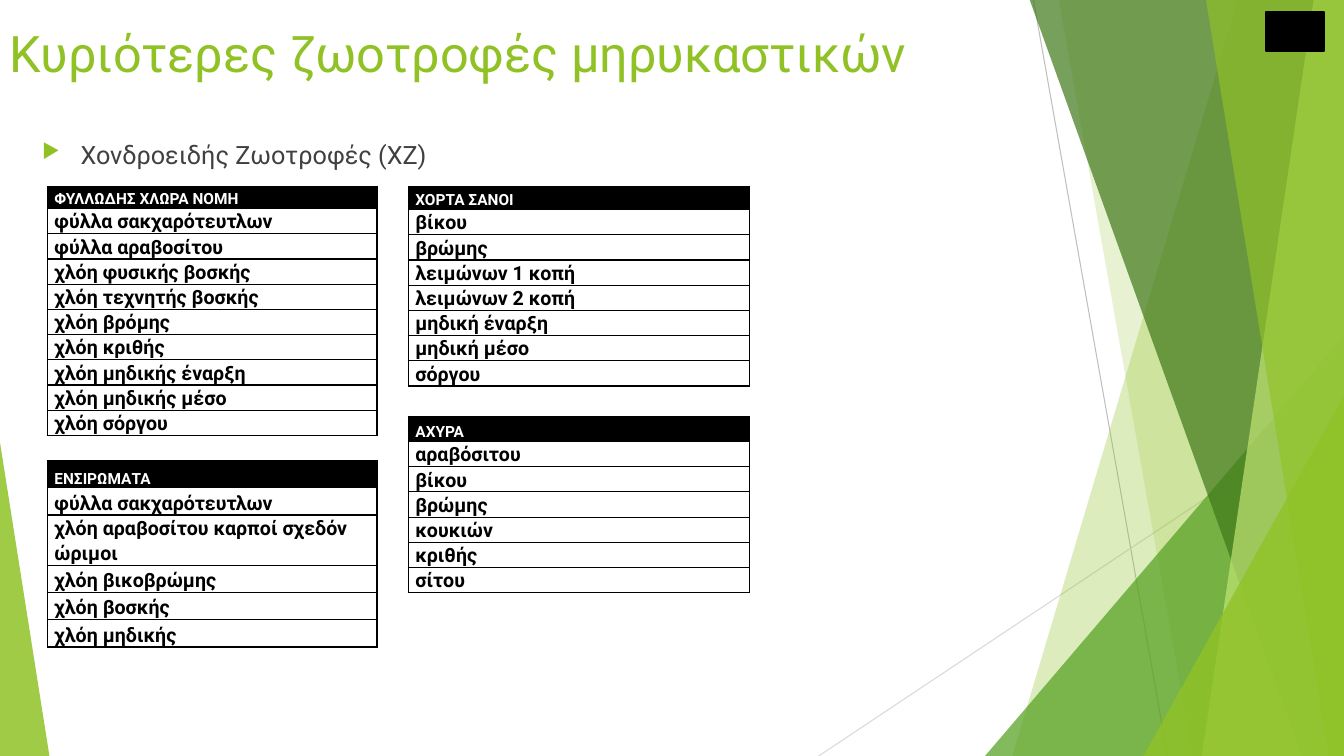
from dataclasses import dataclass

from lxml.etree import SubElement
from pptx import Presentation
from pptx.dml.color import RGBColor
from pptx.enum.shapes import MSO_CONNECTOR, MSO_SHAPE
from pptx.enum.text import MSO_ANCHOR
from pptx.oxml import parse_xml
from pptx.oxml.ns import nsdecls, qn
from pptx.util import Inches, Pt


@dataclass(frozen=True)
class Theme:
    font: str = "Roboto"
    lime: str = "90C226"
    green: str = "54A021"
    forest: str = "3F7819"
    pale: str = "C0E474"
    gray: str = "BFBFBF"
    light_gray: str = "D9D9D9"
    text: str = "404040"
    black: str = "000000"
    white: str = "FFFFFF"
    title_size: int = 36
    body_size: int = 18
    cell_size: int = 14
    header_size: int = 11


class FeedSlide:
    """Draws the elements of one slide in a shared style."""

    def __init__(self, page, theme):
        self.shapes = page.shapes
        self.theme = theme

    def paint(self, shape, color, opacity=100):
        shape.shadow.inherit = False
        shape.fill.solid()
        shape.fill.fore_color.rgb = RGBColor.from_string(color)
        shape.line.fill.background()
        if opacity < 100:
            tint = shape.fill._xPr.find(f".//{qn('a:srgbClr')}")
            SubElement(tint, qn("a:alpha"), val=str(opacity * 1000))

    def ray(self, start, end, color):
        line = self.shapes.add_connector(
            MSO_CONNECTOR.STRAIGHT, *map(Inches, start + end))
        line.line.color.rgb = RGBColor.from_string(color)
        line.line.width = Pt(0.75)
        SubElement(line._element.spPr, qn("a:effectLst"))

    def band(self, top_left, bottom_left, color, opacity):
        top, bottom, right = -0.01, 7.5, 13.33
        corners = [(right, top), (right, bottom), (bottom_left, bottom)]
        builder = self.shapes.build_freeform(Inches(top_left), Inches(top))
        builder.add_line_segments([(Inches(x), Inches(y)) for x, y in corners])
        self.paint(builder.convert_to_shape(), color, opacity)

    def triangle(self, left, top, width, apex, color, opacity):
        shape = self.shapes.add_shape(
            MSO_SHAPE.ISOSCELES_TRIANGLE,
            *map(Inches, (left, top, width, 7.5 - top)))
        shape.adjustments[0] = apex
        self.paint(shape, color, opacity)

    def badge(self, left, top, width, height):
        shape = self.shapes.add_shape(
            MSO_SHAPE.RECTANGLE, *map(Inches, (left, top, width, height)))
        self.paint(shape, self.theme.black)
        shape.line.color.rgb = RGBColor.from_string(self.theme.black)
        shape.line.width = Pt(1.5)

    def style(self, para, size, color, bold=False):
        para.font.name = self.theme.font
        para.font.size = Pt(size)
        para.font.bold = bold
        para.font.color.rgb = RGBColor.from_string(color)

    def text(self, left, top, width, height, words, size, color):
        box = self.shapes.add_textbox(*map(Inches, (left, top, width, height)))
        box.text_frame.word_wrap = True
        para = box.text_frame.paragraphs[0]
        para.text = words
        self.style(para, size, color)
        return para

    def bullet(self, para):
        para.space_before = Pt(10)
        props = para._p.get_or_add_pPr()
        props.set("marL", str(Inches(0.38)))
        props.set("indent", str(-Inches(0.38)))
        color = SubElement(props, qn("a:buClr"))
        SubElement(color, qn("a:srgbClr"), val=self.theme.lime)
        SubElement(props, qn("a:buSzPct"), val="80000")
        SubElement(props, qn("a:buChar"), char="▶")
        props.append(props.find(qn("a:defRPr")))

    def borders(self, cell):
        props = cell._tc.get_or_add_tcPr()
        for place, side in enumerate("LRTB"):
            props.insert(place, parse_xml(
                f'<a:ln{side} {nsdecls("a")} w="12700"><a:solidFill>'
                f'<a:srgbClr val="{self.theme.black}"/></a:solidFill></a:ln{side}>'))

    def table(self, left, top, width, row_height, header, feeds):
        theme = self.theme
        labels = [header, *feeds]
        frame = self.shapes.add_table(
            len(labels), 1,
            *map(Inches, (left, top, width, row_height * len(labels))))
        frame.table.horz_banding = False
        for index, label in enumerate(labels):
            frame.table.rows[index].height = Inches(row_height)
            cell = frame.table.cell(index, 0)
            cell.margin_left = cell.margin_right = Inches(0.07)
            cell.margin_top = cell.margin_bottom = 0
            cell.vertical_anchor = MSO_ANCHOR.BOTTOM
            is_header = index == 0
            cell.fill.solid()
            cell.fill.fore_color.rgb = RGBColor.from_string(
                theme.black if is_header else theme.white)
            self.borders(cell)
            para = cell.text_frame.paragraphs[0]
            para.text = label
            para.line_spacing = 1.07
            para.space_after = Pt(8)
            self.style(para, theme.header_size if is_header else theme.cell_size,
                       theme.white if is_header else theme.black, bold=True)


def main():
    deck = Presentation()
    deck.slide_width, deck.slide_height = Inches(13.33), Inches(7.5)
    theme = Theme()
    slide = FeedSlide(deck.slides.add_slide(deck.slide_layouts[6]), theme)

    slide.ray((10.25, 0), (11.58, 7.5), theme.gray)
    slide.ray((13.33, 4.03), (8.12, 7.5), theme.light_gray)
    slide.band(12.28, 10.04, theme.lime, 30)
    slide.band(10.5, 11.83, theme.lime, 20)
    slide.triangle(9.77, 3.33, 3.56, 1, theme.green, 72)
    slide.band(10.21, 12.91, theme.forest, 70)
    slide.band(13.03, 11.92, theme.pale, 70)
    slide.band(11.96, 13.18, theme.lime, 65)
    slide.triangle(11.34, 3.93, 1.99, 1, theme.lime, 80)
    slide.triangle(0, 4.39, 0.49, 0, theme.lime, 85)

    slide.text(0, 0.17, 9.4, 1.44, "Κυριότερες ζωοτροφές μηρυκαστικών",
               theme.title_size, theme.lime)
    slide.bullet(slide.text(0.32, 1.33, 9.08, 4.24, "Χονδροειδής Ζωοτροφές (ΧΖ)",
                            theme.body_size, theme.text))

    slide.table(0.47, 1.85, 3.27, 0.22, "ΦΥΛΛΩΔΗΣ ΧΛΩΡΑ ΝΟΜΗ", [
        "φύλλα σακχαρότευτλων", "φύλλα αραβοσίτου", "χλόη φυσικής βοσκής",
        "χλόη τεχνητής βοσκής", "χλόη βρόμης", "χλόη κριθής",
        "χλόη μηδικής έναρξη", "χλόη μηδικής μέσο", "χλόη σόργου"])
    slide.table(0.47, 4.57, 3.27, 0.27, "ΕΝΣΙΡΩΜΑΤΑ", [
        "φύλλα σακχαρότευτλων", "χλόη αραβοσίτου καρποί σχεδόν ώριμοι",
        "χλόη βικοβρώμης", "χλόη βοσκής", "χλόη μηδικής"])
    slide.table(4.05, 1.85, 3.38, 0.23, "ΧΟΡΤΑ ΣΑΝΟΙ", [
        "βίκου", "βρώμης", "λειμώνων 1 κοπή", "λειμώνων 2 κοπή",
        "μηδική έναρξη", "μηδική μέσο", "σόργου"])
    slide.table(4.05, 4.13, 3.38, 0.25, "ΑΧΥΡΑ", [
        "αραβόσιτου", "βίκου", "βρώμης", "κουκιών", "κριθής", "σίτου"])
    slide.badge(12.56, 0.12, 0.57, 0.39)
    deck.save("out.pptx")


if __name__ == "__main__":
    main()
